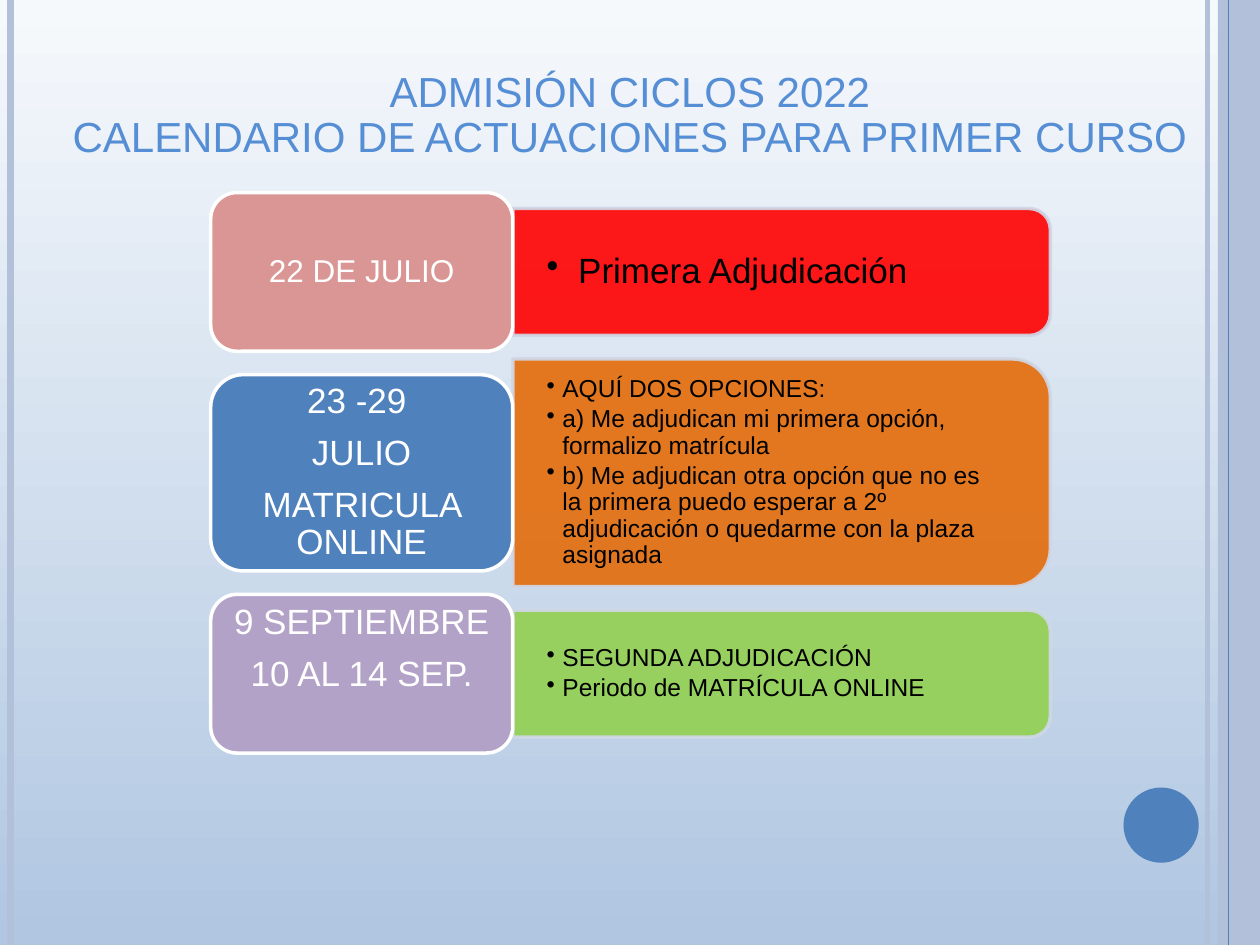
from lxml import etree
from pptx import Presentation
from pptx.dml.color import RGBColor
from pptx.enum import shapes, text
from pptx.oxml import ns
from pptx.util import Pt

WIDTH, HEIGHT = 720, 540
BLUE, PALE_BLUE = "4F81BD", "B2C0DA"
CARD_LEFT, CARD_WIDTH = 120.4, 172.6
BODY_LEFT, BODY_WIDTH = 293, 307.2
FIRST_CENTRE, ROW_PITCH = 155.4, 114.8


def rgb(value):
    return RGBColor.from_string(value)


def sub(parent, tag, **attrs):
    return etree.SubElement(parent, ns.qn(tag), attrs)


def write(tf, lines, size=14, color="000000", align=text.PP_ALIGN.LEFT,
          after=0, indent=0, insets=(0, 0, 0, 0)):
    """Fill a text frame, one paragraph per line; a positive indent adds bullets."""
    tf.word_wrap = True
    tf.vertical_anchor = text.MSO_ANCHOR.MIDDLE
    tf.margin_left, tf.margin_top, tf.margin_right, tf.margin_bottom = map(Pt, insets)
    for i, line in enumerate(lines):
        p = tf.add_paragraph() if i else tf.paragraphs[0]
        p.text = line
        p.alignment = align
        p.line_spacing = 0.9
        p.space_after = Pt(after)
        for r in p.runs:
            r.font.name = "Arial"
            r.font.size = Pt(size)
            r.font.color.rgb = rgb(color)
        if indent:
            pPr = p._p.get_or_add_pPr()
            pPr.set("marL", str(Pt(indent)))
            pPr.set("indent", str(-Pt(indent)))
            sub(pPr, "a:buChar", char="•")


class Deck:
    def __init__(self):
        self.prs = Presentation()
        self.prs.slide_width, self.prs.slide_height = Pt(WIDTH), Pt(HEIGHT)
        self.s = self.prs.slides.add_slide(self.prs.slide_layouts[6])

    def background(self, top, bottom):
        fill = self.s.background.fill
        fill.gradient()
        fill.gradient_angle = 270
        for stop, color, position in zip(fill.gradient_stops, (top, bottom), (0, 1)):
            stop.color.rgb = rgb(color)
            stop.position = position

    def vertical_line(self, x, color, width):
        c = self.s.shapes.add_connector(
            shapes.MSO_CONNECTOR.STRAIGHT, Pt(x), 0, Pt(x), Pt(HEIGHT))
        c.line.color.rgb = rgb(color)
        c.line.width = Pt(width)
        sub(c._element.spPr, "a:effectLst")

    def shape(self, kind, x, y, w, h, fill, line=None, opacity=None):
        sp = self.s.shapes.add_shape(kind, Pt(x), Pt(y), Pt(w), Pt(h))
        sp.shadow.inherit = False
        sp.fill.solid()
        sp.fill.fore_color.rgb = rgb(fill)
        if line:
            sp.line.color.rgb = rgb(line)
            sp.line.width = Pt(2)
        else:
            sp.line.fill.background()
        if opacity:
            for clr in sp._element.spPr.iter(ns.qn("a:srgbClr")):
                sub(clr, "a:alpha", val=str(opacity * 1000))
        return sp

    def text(self, x, y, w, h, lines, **fmt):
        box = self.s.shapes.add_textbox(Pt(x), Pt(y), Pt(w), Pt(h))
        write(box.text_frame, lines, **fmt)

    def body(self, centre, height, fill, lines, **fmt):
        """Bulleted panel rounded on its right side."""
        sp = self.shape(shapes.MSO_SHAPE.ROUND_2_SAME_RECTANGLE,
                        BODY_LEFT + (BODY_WIDTH - height) / 2, centre - BODY_WIDTH / 2,
                        height, BODY_WIDTH, fill, "D0D8E8", opacity=90)
        sp.rotation = 90
        pad = 0.05 * height
        self.text(BODY_LEFT, centre - height / 2 + pad, BODY_WIDTH - pad,
                  height - 2 * pad, lines, after=2, insets=(19.4, 10, 19.4, 10), **fmt)

    def card(self, centre, height, fill, lines, size=20, bottom=3):
        sp = self.shape(shapes.MSO_SHAPE.ROUNDED_RECTANGLE, CARD_LEFT,
                        centre - height / 2, CARD_WIDTH, height, fill, "FFFFFF")
        write(sp.text_frame, lines, size=size, color="FFFFFF", after=8,
              align=text.PP_ALIGN.CENTER, insets=(5.5, 3, 5.5, bottom))


ROWS = [
    dict(body=dict(height=72.6, fill="FF0000", size=20, indent=18,
                   lines=["Primera Adjudicación"]),
         card=dict(height=90.7, fill="D99694", size=18, lines=["22 DE JULIO"])),
    dict(body=dict(height=130.2, fill="E46C0A", indent=9, lines=[
        "AQUÍ DOS OPCIONES:",
        "a) Me adjudican mi primera opción, formalizo matrícula",
        "b) Me adjudican otra opción que no es la primera puedo esperar a 2º "
        "adjudicación o quedarme con la plaza asignada"]),
         card=dict(height=112.2, fill=BLUE,
                   lines=["23 -29 ", "JULIO", "MATRICULA ONLINE"])),
    dict(body=dict(height=72.6, fill="92D050", indent=9, lines=[
        "SEGUNDA ADJUDICACIÓN", "Periodo de MATRÍCULA ONLINE"]),
         card=dict(height=90.7, fill="B3A2C7", bottom=31,
                   lines=["9 SEPTIEMBRE", "10 AL 14 SEP."])),
]


def main():
    deck = Deck()
    deck.background("F6F9FC", "B0C6E1")
    deck.vertical_line(690, PALE_BLUE, 3)
    deck.vertical_line(6, PALE_BLUE, 4.5)
    deck.shape(shapes.MSO_SHAPE.RECTANGLE, 696, 0, 24, HEIGHT, PALE_BLUE)
    deck.vertical_line(702, BLUE, 0.75)
    deck.shape(shapes.MSO_SHAPE.OVAL, 642, 450, 43, 43, BLUE)
    deck.text(36, 21.6, 648, 90,
              ["ADMISIÓN CICLOS 2022\vCALENDARIO DE ACTUACIONES PARA PRIMER CURSO"],
              size=24, color="558ED5", align=text.PP_ALIGN.CENTER)
    for i, row in enumerate(ROWS):
        centre = FIRST_CENTRE + i * ROW_PITCH
        deck.body(centre, **row["body"])
        deck.card(centre, **row["card"])
    deck.prs.save("out.pptx")


if __name__ == "__main__":
    main()
